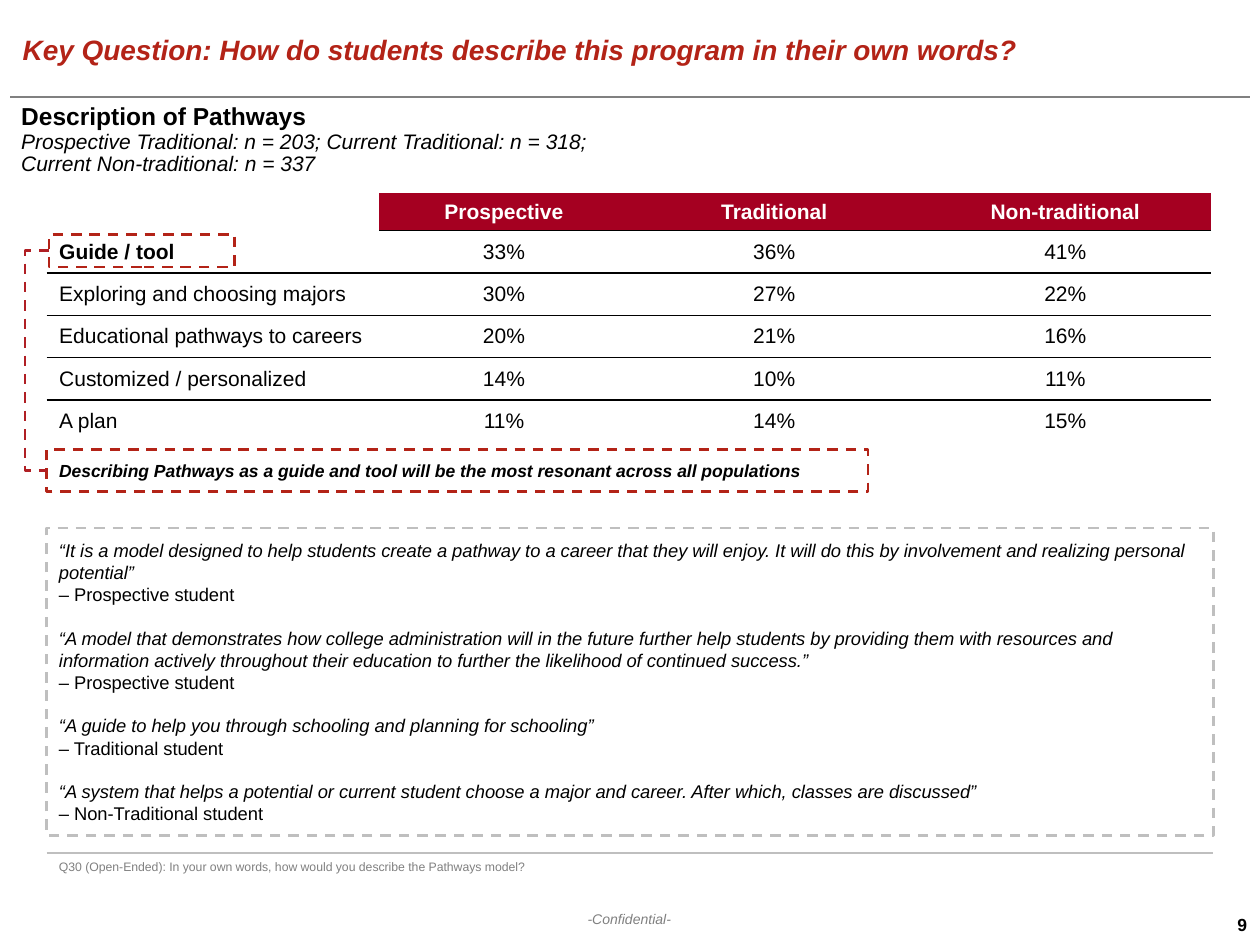
from lxml.etree import SubElement
from pptx import Presentation
from pptx.dml.color import RGBColor
from pptx.enum.dml import MSO_LINE
from pptx.enum.shapes import MSO_CONNECTOR, MSO_SHAPE
from pptx.enum.text import MSO_ANCHOR, PP_ALIGN
from pptx.oxml.ns import qn
from pptx.util import Inches, Pt

COLORS = {"title": "B32317", "link": "B01F24", "header": "A50021", "white": "FFFFFF",
          "black": "000000", "gray": "808080", "light": "BFBFBF"}

TITLE = "Key Question: How do students describe this program in their own words?"
HEADING = "Description of Pathways"
SAMPLE = ("Prospective Traditional: n = 203; Current Traditional: n = 318; "
          "Current Non-traditional: n = 337")
TAKEAWAY = "Describing Pathways as a guide and tool will be the most resonant across all populations"
QUESTION = "Q30 (Open-Ended): In your own words, how would you describe the Pathways model?"
RESPONSES = [
    ["", "Prospective", "Traditional", "Non-traditional"],
    ["Guide / tool", "33%", "36%", "41%"],
    ["Exploring and choosing majors", "30%", "27%", "22%"],
    ["Educational pathways to careers", "20%", "21%", "16%"],
    ["Customized / personalized", "14%", "10%", "11%"],
    ["A plan", "11%", "14%", "15%"],
]
QUOTES = [
    ("“It is a model designed to help students create a pathway to a career that they will "
     "enjoy. It will do this by involvement and realizing personal potential”",
     "– Prospective student"),
    ("“A model that demonstrates how college administration will in the future further help "
     "students by providing them with resources and information actively throughout their "
     "education to further the likelihood of continued success.”",
     "– Prospective student"),
    ("“A guide to help you through schooling and planning for schooling”",
     "– Traditional student"),
    ("“A system that helps a potential or current student choose a major and career. "
     "After which, classes are discussed”",
     "– Non-Traditional student"),
]


def rgb(name):
    return RGBColor.from_string(COLORS[name])


def write(paragraph, text, size, color="black", bold=False, italic=False, **layout):
    """Put one run in a paragraph; layout holds paragraph attributes."""
    for name, value in layout.items():
        setattr(paragraph, name, value)
    run = paragraph.add_run()
    run.text = text
    values = {"name": "Arial", "size": Pt(size), "bold": bold, "italic": italic}
    for name, value in values.items():
        setattr(run.font, name, value)
    run.font.color.rgb = rgb(color)


def add_text_box(slide, box, **frame_format):
    frame = slide.shapes.add_textbox(*map(Inches, box)).text_frame
    for name, value in {"word_wrap": True, **frame_format}.items():
        setattr(frame, name, value)
    return frame


def add_line(slide, start, end, color, width, kind=MSO_CONNECTOR.STRAIGHT):
    line = slide.shapes.add_connector(kind, *map(Inches, start + end))
    line.line.color.rgb = rgb(color)
    line.line.width = Pt(width)
    SubElement(line.element.spPr, qn("a:effectLst"))
    return line


def add_dashed_box(slide, box, color):
    shape = slide.shapes.add_shape(MSO_SHAPE.RECTANGLE, *map(Inches, box))
    shape.shadow.inherit = False
    shape.fill.background()
    shape.line.color.rgb = rgb(color)
    shape.line.width = Pt(1.5)
    shape.line.dash_style = MSO_LINE.DASH
    shape.text_frame.word_wrap = True
    shape.text_frame.vertical_anchor = MSO_ANCHOR.MIDDLE
    return shape


def set_borders(cell, ruled_sides):
    """Rule the named sides (T, B) in black and clear the others."""
    properties = cell._tc.get_or_add_tcPr()
    for side in "LRTB":
        border = SubElement(properties, qn(f"a:ln{side}"), w=str(Pt(1)))
        if side in ruled_sides:
            fill = SubElement(border, qn("a:solidFill"))
            SubElement(fill, qn("a:srgbClr"), val=COLORS["black"])
        else:
            SubElement(border, qn("a:noFill"))


def build_title(slide, box):
    left, top, width, height = box
    title = slide.shapes.title
    places = {"left": left, "top": top, "width": width, "height": height}
    for name, value in places.items():
        setattr(title, name, Inches(value))
    title.text_frame.vertical_anchor = MSO_ANCHOR.MIDDLE
    write(title.text_frame.paragraphs[0], TITLE, 16, "title", True, True,
          alignment=PP_ALIGN.LEFT, line_spacing=0.9)
    rule = top + height + 0.02
    add_line(slide, (left, rule), (left + width + 0.01, rule), "gray", 1.5)


def build_heading(slide, box):
    frame = add_text_box(slide, box)
    write(frame.paragraphs[0], HEADING, 14, bold=True, line_spacing=0.9)
    write(frame.add_paragraph(), SAMPLE, 12, italic=True, line_spacing=0.9)


def build_table(slide, box):
    last_row = len(RESPONSES) - 1
    header_height = 0.28
    body_height = (box[3] - header_height) / last_row
    table = slide.shapes.add_table(len(RESPONSES), len(RESPONSES[0]), *map(Inches, box)).table
    table.first_row = table.horz_banding = False
    for column, width in zip(table.columns, (2.64, 1.98, 2.31, 2.31)):
        column.width = Inches(width)
    for r, texts in enumerate(RESPONSES):
        table.rows[r].height = Inches(body_height if r else header_height)
        for c, text in enumerate(texts):
            cell = table.cell(r, c)
            cell.vertical_anchor = MSO_ANCHOR.MIDDLE
            above = "T" if r > 1 or (r and c) else ""
            below = "B" if r < last_row and (r or c) else ""
            set_borders(cell, above + below)
            is_header = r == 0 and c > 0
            if is_header:
                cell.fill.solid()
                cell.fill.fore_color.rgb = rgb("header")
            else:
                cell.fill.background()
            paragraph = cell.text_frame.paragraphs[0]
            if text:
                write(paragraph, text, 12, "white" if is_header else "black",
                      bold=is_header or (r == 1 and c == 0),
                      alignment=PP_ALIGN.CENTER if c else PP_ALIGN.LEFT)
            else:
                # A small end mark keeps the empty corner from stretching its row
                SubElement(paragraph._p, qn("a:endParaRPr"), sz="1200")


def build_takeaway(slide, guide_box, takeaway_box):
    guide = add_dashed_box(slide, guide_box, "title")
    takeaway = add_dashed_box(slide, takeaway_box, "title")
    write(takeaway.text_frame.paragraphs[0], TAKEAWAY, 10, bold=True, italic=True,
          alignment=PP_ALIGN.LEFT)
    # Bracket joining the two left sides
    ends = [(left, top + height / 2) for left, top, _, height in (guide_box, takeaway_box)]
    bracket = add_line(slide, *ends, "link", 1.5, MSO_CONNECTOR.ELBOW)
    bracket.line.dash_style = MSO_LINE.DASH
    bracket.begin_connect(guide, 1)
    bracket.end_connect(takeaway, 1)
    reach = 0.19 / (guide_box[0] - takeaway_box[0])
    guides = bracket.element.spPr.find(qn("a:prstGeom")).find(qn("a:avLst"))
    SubElement(guides, qn("a:gd"), name="adj1", fmla=f"val {round(reach * 100000)}")


def build_quotes(slide, box):
    frame = add_dashed_box(slide, box, "light").text_frame
    for i, (quote, speaker) in enumerate(QUOTES):
        paragraph = frame.add_paragraph() if i else frame.paragraphs[0]
        write(paragraph, quote, 10.5, italic=True, alignment=PP_ALIGN.LEFT,
              space_before=Pt(12.5 if i else 0))
        write(frame.add_paragraph(), speaker, 10.5, alignment=PP_ALIGN.LEFT)


def build_footnote(slide, box):
    left, top, width, _ = box
    add_line(slide, (left, top - 0.01), (left + width, top - 0.01), "light", 0.75)
    write(add_text_box(slide, box).paragraphs[0], QUESTION, 7, "gray", line_spacing=0.9)


def build_footer(slide, label_box, number_box):
    margins = dict.fromkeys(("margin_left", "margin_top", "margin_right", "margin_bottom"),
                            Inches(0.1))
    layout = {"word_wrap": False, "vertical_anchor": MSO_ANCHOR.MIDDLE, **margins}
    label = add_text_box(slide, label_box, **layout)
    write(label.paragraphs[0], "-Confidential-", 8, "gray", italic=True,
          alignment=PP_ALIGN.CENTER)
    number = add_text_box(slide, number_box, **layout)
    write(number.paragraphs[0], "9", 10, bold=True)


def main():
    deck = Presentation()
    deck.slide_width, deck.slide_height = Inches(10), Inches(7.5)
    slide = deck.slides.add_slide(deck.slide_layouts[5])
    build_title(slide, (0.08, 0.06, 9.83, 0.69))
    build_heading(slide, (0.07, 0.78, 4.93, 0.52))
    build_table(slide, (0.37, 1.53, 9.24, 1.96))
    build_takeaway(slide, (0.39, 1.86, 1.47, 0.26), (0.37, 3.57, 6.52, 0.33))
    build_quotes(slide, (0.37, 4.19, 9.26, 2.44))
    build_footnote(slide, (0.37, 6.78, 8.93 + 0.33, 0.69))
    build_footer(slide, (4, 7.17, 1.99, 0.25), (9.75, 7.25, 0.17, 0.17))
    deck.save("out.pptx")


if __name__ == "__main__":
    main()
